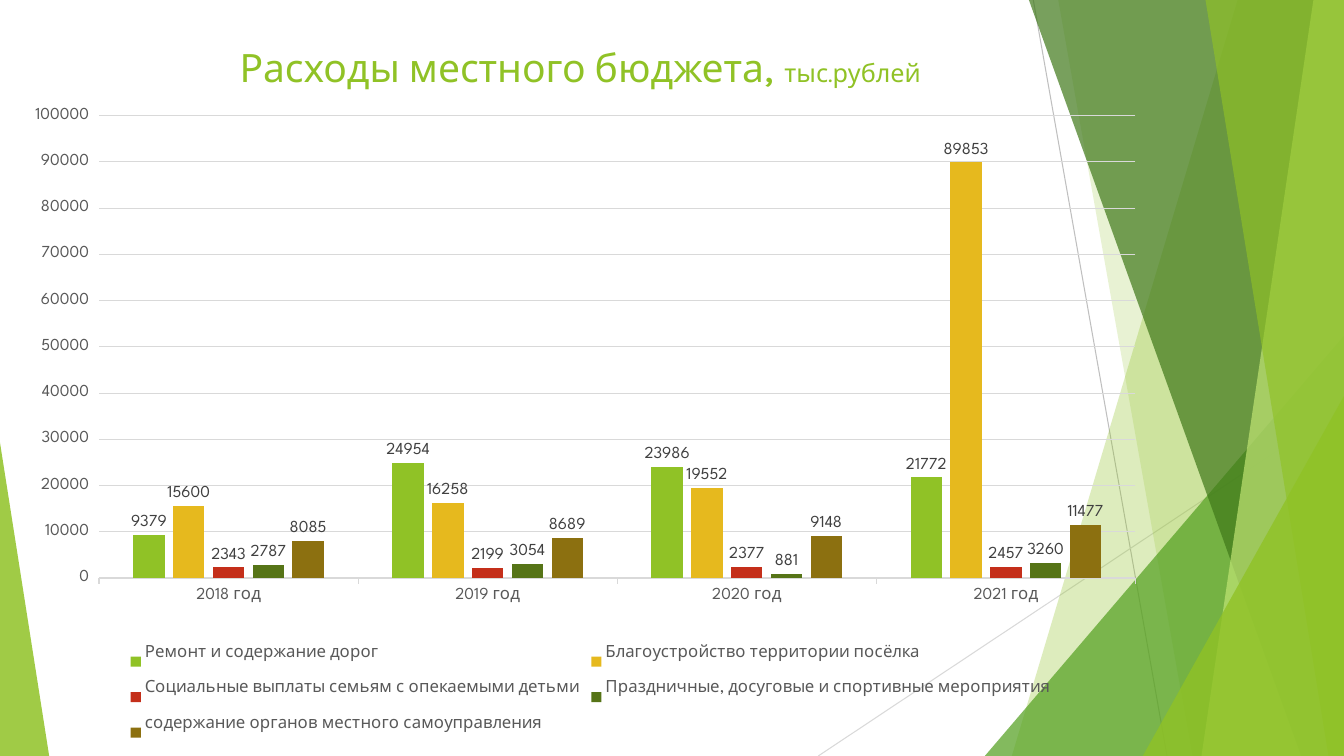
from dataclasses import dataclass

from pptx import Presentation, oxml
from pptx import util as u
from pptx.chart.data import CategoryChartData
from pptx.dml.color import RGBColor
from pptx.enum import chart as charts, shapes, text
from pptx.oxml import ns

WIDTH, HEIGHT = 33.87, 19.05
GREEN = "90C226"
CHART_FONT = "League Spartan"


@dataclass
class Ray:
    start: tuple[float, float]
    end: tuple[float, float]
    color: str


@dataclass
class Ribbon:
    top_left: float
    bottom_left: float
    color: str
    opacity: int


@dataclass
class Corner:
    left: float
    top: float
    width: float
    apex: int
    color: str
    opacity: int


@dataclass
class Expense:
    name: str
    values: tuple[int, ...]
    color: str


RAYS = [
    Ray((26.04, 0), (29.41, HEIGHT), "BFBFBF"),
    Ray((WIDTH, 10.24), (20.62, HEIGHT), "D9D9D9"),
]
DECORATION = [
    Ribbon(31.19, 25.5, GREEN, 30),
    Ribbon(26.67, 30.05, GREEN, 20),
    Corner(24.82, 8.46, 9.05, 1, "54A021", 72),
    Ribbon(25.93, 32.79, "3F7819", 70),
    Ribbon(33.1, 30.28, "C0E474", 70),
    Ribbon(30.38, 33.48, GREEN, 65),
    Corner(28.8, 9.98, 5.07, 1, GREEN, 80),
    Corner(0, 11.15, 1.24, 0, GREEN, 85),
]
YEARS = ["2018 год", "2019 год", "2020 год", "2021 год"]
EXPENSES = [
    Expense("Ремонт и содержание дорог\n", (9379, 24954, 23986, 21772), GREEN),
    Expense("Благоустройство территории посёлка\n", (15600, 16258, 19552, 89853), "E6B91E"),
    Expense("Социальные выплаты семьям с опекаемыми детьми\n", (2343, 2199, 2377, 2457), "C42F1A"),
    Expense("Праздничные, досуговые и спортивные мероприятия\n", (2787, 3054, 881, 3260), "567417"),
    Expense("содержание органов местного самоуправления", (8085, 8689, 9148, 11477), "8C7010"),
]
TITLE = [("Расходы местного бюджета", 27.9), (", ", 32.4), ("тыс.рублей", 18)]
PLOT_LAYOUT = {"x": 0.062, "y": 0.014, "w": 0.923, "h": 0.733}


def rgb(color: str) -> RGBColor:
    return RGBColor.from_string(color)


def set_line(line, color: str) -> None:
    line.color.rgb = rgb(color)
    line.width = u.Pt(0.75)


def set_font(font, size: float, color: str, name: str = CHART_FONT) -> None:
    font.name = name
    font.size = u.Pt(size)
    font.bold = False
    font.color.rgb = rgb(color)


def paint(shape, color: str, opacity: int) -> None:
    shape.shadow.inherit = False
    shape.fill.solid()
    shape.fill.fore_color.rgb = rgb(color)
    shape.line.fill.background()
    solid_color = shape.fill._xPr.find(".//" + ns.qn("a:srgbClr"))
    oxml.xmlchemy.OxmlElement
    alpha = solid_color.makeelement(ns.qn("a:alpha"), {"val": str(opacity * 1000)})
    solid_color.append(alpha)


def draw_ray(slide, ray: Ray) -> None:
    ends = [u.Cm(value) for value in (*ray.start, *ray.end)]
    connector = slide.shapes.add_connector(shapes.MSO_CONNECTOR.STRAIGHT, *ends)
    set_line(connector.line, ray.color)
    properties = connector._element.spPr
    properties.append(properties.makeelement(ns.qn("a:effectLst"), {}))


def draw_ribbon(slide, ribbon: Ribbon) -> None:
    builder = slide.shapes.build_freeform(u.Cm(ribbon.top_left), 0)
    corners = [(WIDTH, 0), (WIDTH, HEIGHT), (ribbon.bottom_left, HEIGHT)]
    builder.add_line_segments([(u.Cm(x), u.Cm(y)) for x, y in corners], close=True)
    paint(builder.convert_to_shape(), ribbon.color, ribbon.opacity)


def draw_corner(slide, corner: Corner) -> None:
    shape = slide.shapes.add_shape(
        shapes.MSO_SHAPE.ISOSCELES_TRIANGLE,
        u.Cm(corner.left), u.Cm(corner.top),
        u.Cm(corner.width), u.Cm(HEIGHT - corner.top),
    )
    shape.adjustments[0] = corner.apex
    paint(shape, corner.color, corner.opacity)


def draw_title(slide) -> None:
    box = slide.shapes.add_textbox(u.Cm(2.24), u.Cm(0.76), u.Cm(24.77), u.Cm(1.75))
    frame = box.text_frame
    frame.word_wrap = True
    frame.vertical_anchor = text.MSO_ANCHOR.MIDDLE
    paragraph = frame.paragraphs[0]
    paragraph.alignment = text.PP_ALIGN.CENTER
    for words, size in TITLE:
        run = paragraph.add_run()
        run.text = words
        set_font(run.font, size, GREEN, "Karla")


def fix_plot_area(chart) -> None:
    area = chart._chartSpace.chart.plotArea
    for layout in area.findall(ns.qn("c:layout")):
        area.remove(layout)
    modes = "".join(f'<c:{axis}Mode val="edge"/>' for axis in "xy")
    sizes = "".join(f'<c:{key} val="{value}"/>' for key, value in PLOT_LAYOUT.items())
    area.insert(0, oxml.parse_xml(
        f'<c:layout {ns.nsdecls("c")}><c:manualLayout><c:layoutTarget val="inner"/>'
        f"{modes}{sizes}</c:manualLayout></c:layout>"
    ))


def draw_chart(slide) -> None:
    data = CategoryChartData()
    data.categories = YEARS
    for expense in EXPENSES:
        data.add_series(expense.name, expense.values)
    chart = slide.shapes.add_chart(
        charts.XL_CHART_TYPE.COLUMN_CLUSTERED,
        u.Cm(0.74), u.Cm(2.69), u.Cm(28.3), u.Cm(15.9), data,
    ).chart
    set_font(chart.font, 10, "000000")
    chart.has_title = False
    chart.has_legend = True
    chart.legend.position = charts.XL_LEGEND_POSITION.BOTTOM
    chart.legend.include_in_layout = False
    set_font(chart.legend.font, 12, "595959")

    for axis in (chart.category_axis, chart.value_axis):
        set_font(axis.tick_labels.font, 12, "595959")
        axis.major_tick_mark = charts.XL_TICK_MARK.OUTSIDE
    set_line(chart.category_axis.format.line, "D9D9D9")
    value_axis = chart.value_axis
    value_axis.minimum_scale, value_axis.maximum_scale = 0, 100000
    value_axis.major_unit = 10000
    value_axis.format.line.fill.background()
    set_line(value_axis.major_gridlines.format.line, "D9D9D9")

    plot = chart.plots[0]
    plot.gap_width, plot.overlap = 219, -27
    plot.vary_by_categories = False
    for series, expense in zip(plot.series, EXPENSES):
        series.format.fill.solid()
        series.format.fill.fore_color.rgb = rgb(expense.color)
        labels = series.data_labels
        labels.show_value = True
        labels.position = charts.XL_LABEL_POSITION.OUTSIDE_END
        set_font(labels.font, 12, "404040")
    fix_plot_area(chart)


def main() -> None:
    presentation = Presentation()
    presentation.slide_width, presentation.slide_height = u.Cm(WIDTH), u.Cm(HEIGHT)
    slide = presentation.slides.add_slide(presentation.slide_layouts[6])
    for ray in RAYS:
        draw_ray(slide, ray)
    for item in DECORATION:
        if isinstance(item, Ribbon):
            draw_ribbon(slide, item)
        else:
            draw_corner(slide, item)
    draw_title(slide)
    draw_chart(slide)
    presentation.save("out.pptx")


if __name__ == "__main__":
    main()
